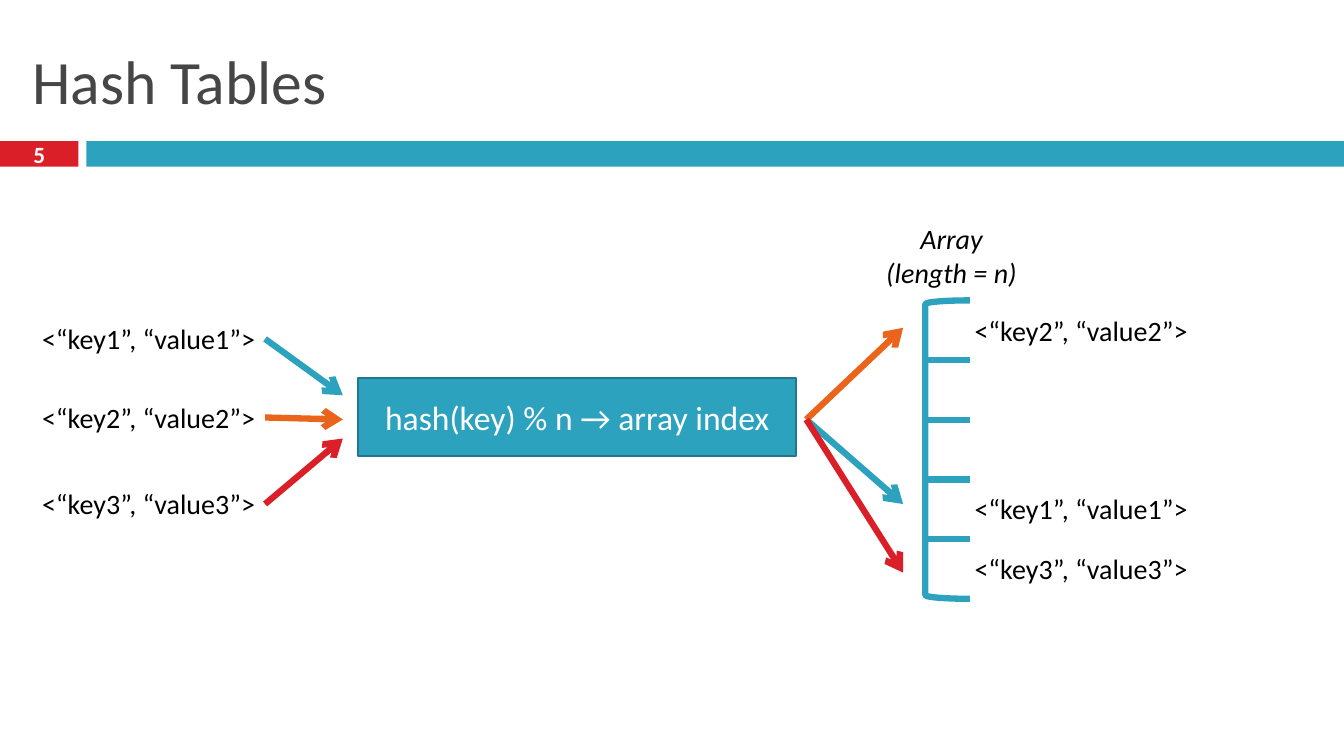
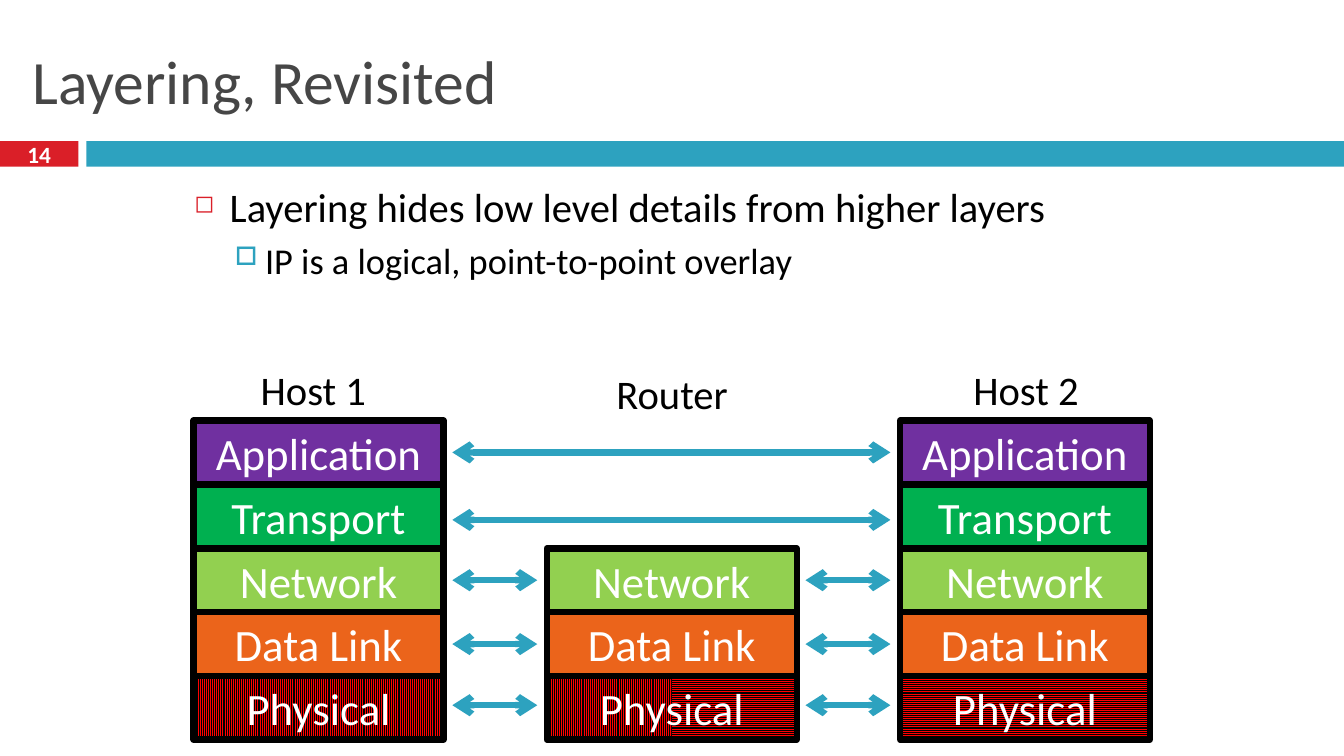
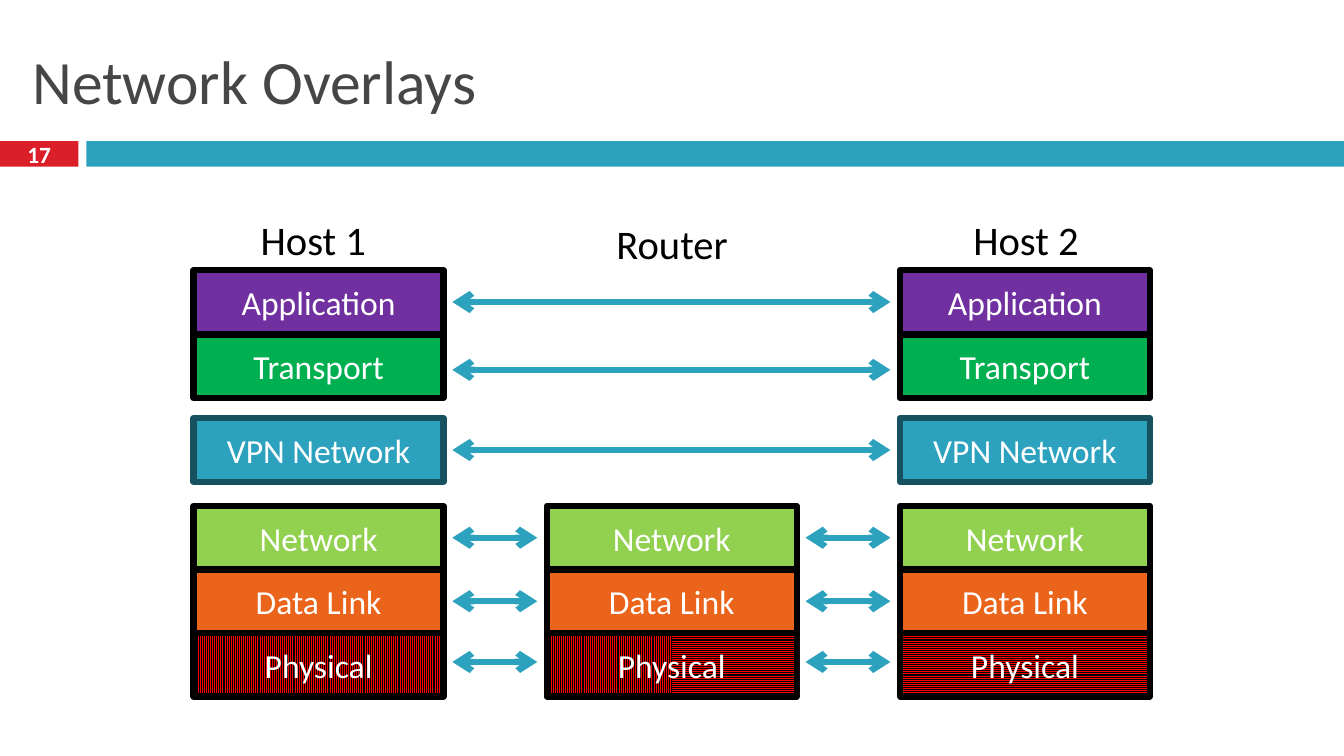
"""Build three networking lecture slides: hash tables, layering and overlays."""
import lxml.etree
import pptx
import pptx.dml.color
import pptx.enum.dml
import pptx.enum.shapes
import pptx.enum.text
import pptx.oxml.ns
import pptx.util

Cm = pptx.util.Cm
Pt = pptx.util.Pt
qn = pptx.oxml.ns.qn
ALIGN = pptx.enum.text.PP_ALIGN
ANCHOR = pptx.enum.text.MSO_ANCHOR
SHAPE = pptx.enum.shapes.MSO_SHAPE
PATTERN = pptx.enum.dml.MSO_PATTERN

COLORS = {
    "red": "DA1F28",
    "blue": "2DA2BF",
    "orange": "EB641B",
    "purple": "7030A0",
    "green": "00B050",
    "lime": "92D050",
    "stripe": "FF0000",
    "title": "464646",
    "black": "000000",
    "white": "FFFFFF",
    "hash edge": "21788D",
    "vpn edge": "175160",
}
VERTICAL = PATTERN.LIGHT_VERTICAL
HORIZONTAL = PATTERN.LIGHT_HORIZONTAL

LAYERS = {
    "Application": ("purple", "black", 0.8),
    "Transport": ("green", "black", 0.89),
    "VPN Network": ("blue", "vpn edge", 0.8),
    "Network": ("lime", "black", 0.8),
    "Data Link": ("orange", "black", 0.8),
    "Physical": (None, "black", 0.73),
}
ROUTER_LAYERS = ("Network", "Data Link", "Physical")
HOST_1, ROUTER, HOST_2 = 4.88, 13.78, 22.68
LAYER_WIDTH, LAYER_HEIGHT = 6.3, 1.6
ARROW_START, ARROW_GAP = 6.52, 0.24


def rgb(name):
    return pptx.dml.color.RGBColor.from_string(COLORS[name])


class Deck:
    """Holds the shared style and the slide being drawn."""

    font = "Calibri"
    width, height = 33.87, 19.05
    stroke = 4.5

    def __init__(self):
        self.presentation = pptx.Presentation()
        self.presentation.slide_width = Cm(self.width)
        self.presentation.slide_height = Cm(self.height)
        self.slide = None

    def new_slide(self, title, number):
        layout = self.presentation.slide_layouts.get_by_name("Title Only")
        self.slide = self.presentation.slides.add_slide(layout)
        heading = self.slide.shapes.title
        heading.left, heading.top = Cm(0.56), Cm(0.64)
        heading.width, heading.height = Cm(32.74), Cm(2.74)
        heading.text_frame.text = title
        heading.text_frame.vertical_anchor = ANCHOR.MIDDLE
        self.style(heading.text_frame.paragraphs[0], 44, "title", ALIGN.LEFT)
        self.box(0, 3.56, 1.98, 0.64, "red", text=number, size=16.6, bold=True)
        self.box(2.18, 3.56, self.width - 2.18, 0.64, "blue")

    def style(self, paragraph, size, color, align, bold=False, italic=False):
        paragraph.alignment = align
        font = paragraph.font
        font.name, font.size = self.font, Pt(size)
        font.bold, font.italic = bold, italic
        font.color.rgb = rgb(color)

    def box(self, left, top, width, height, fill=None, edge=None, weight=stroke,
            text="", size=24, bold=False, pattern=None, kind=SHAPE.RECTANGLE):
        shape = self.slide.shapes.add_shape(kind, Cm(left), Cm(top), Cm(width), Cm(height))
        shape.shadow.inherit = False
        if pattern is not None:
            shape.fill.patterned()
            shape.fill.pattern = pattern
            shape.fill.fore_color.rgb = rgb("black")
            shape.fill.back_color.rgb = rgb("stripe")
        elif fill:
            shape.fill.solid()
            shape.fill.fore_color.rgb = rgb(fill)
        else:
            shape.fill.background()
        if edge:
            shape.line.color.rgb = rgb(edge)
            shape.line.width = Pt(weight)
        else:
            shape.line.fill.background()
        if text:
            frame = shape.text_frame
            frame.text = text
            frame.vertical_anchor = ANCHOR.MIDDLE
            frame.margin_top = frame.margin_bottom = 0
            self.style(frame.paragraphs[0], size, "white", ALIGN.CENTER, bold)

    def text_frame(self, left, top, width, height, text):
        label = self.slide.shapes.add_textbox(Cm(left), Cm(top), Cm(width), Cm(height))
        label.text_frame.word_wrap = True
        label.text_frame.text = text
        return label.text_frame

    def label(self, left, top, width, height, text, size=20, align=ALIGN.CENTER,
              italic=False, before=0):
        for paragraph in self.text_frame(left, top, width, height, text).paragraphs:
            paragraph.space_before = Pt(before)
            self.style(paragraph, size, "black", align, italic=italic)

    def bullets(self, left, top, width, height, items):
        levels = (
            ("◻", "red", 60, 0.89, 0.89, 29, 7),
            ("□", "blue", 70, 1.78, 0.76, 26, 5.5),
        )
        frame = self.text_frame(left, top, width, height, "\n".join(text for _, text in items))
        for paragraph, (level, _) in zip(frame.paragraphs, items):
            mark, color, percent, margin, hanging, size, before = levels[level]
            paragraph.level = level
            paragraph.space_before = Pt(before)
            properties = paragraph._p.get_or_add_pPr()
            properties.set("marL", str(Cm(margin)))
            properties.set("indent", str(-Cm(hanging)))
            tint = lxml.etree.SubElement(properties, qn("a:buClr"))
            lxml.etree.SubElement(tint, qn("a:srgbClr"), val=COLORS[color])
            lxml.etree.SubElement(properties, qn("a:buSzPct"), val=str(percent * 1000))
            lxml.etree.SubElement(properties, qn("a:buChar"), char=mark)
            self.style(paragraph, size, "black", ALIGN.LEFT)

    def line(self, start, end, color="blue", heads=()):
        connector = self.slide.shapes.add_connector(
            pptx.enum.shapes.MSO_CONNECTOR.STRAIGHT, *map(Cm, (*start, *end)))
        connector.line.color.rgb = rgb(color)
        connector.line.width = Pt(self.stroke)
        outline = connector.line._get_or_add_ln()
        for head in heads:
            lxml.etree.SubElement(outline, qn(f"a:{head}"), type="arrow")
        lxml.etree.SubElement(connector._element.spPr, qn("a:effectLst"))

    def layer(self, name, left, top, size):
        fill, edge, _ = LAYERS[name]
        pattern = None
        if name == "Physical" and left == ROUTER:
            half = LAYER_WIDTH / 2
            self.box(left, top, half, LAYER_HEIGHT, pattern=VERTICAL)
            self.box(left + half, top, half, LAYER_HEIGHT, pattern=HORIZONTAL)
        elif name == "Physical":
            pattern = VERTICAL if left == HOST_1 else HORIZONTAL
        self.box(left, top, LAYER_WIDTH, LAYER_HEIGHT, fill, edge,
                 text=name, size=size, pattern=pattern)

    def stacks(self, tops, size):
        label_top = tops["Application"] - 1.52
        for name, left, label_left, drop in (
            ("Host 1", HOST_1, 5.92, 0),
            ("Router", ROUTER, 14.96, 0.1),
            ("Host 2", HOST_2, 23.88, 0),
        ):
            self.label(label_left, label_top + drop, 3.96, 1.5, name, 29, before=7)
            for layer, top in tops.items():
                if left != ROUTER or layer in ROUTER_LAYERS:
                    self.layer(layer, left, top, size)
        for layer, top in tops.items():
            hops = [HOST_1, ROUTER, HOST_2] if layer in ROUTER_LAYERS else [HOST_1, HOST_2]
            y = top + LAYERS[layer][2]
            for near, far in zip(hops, hops[1:]):
                self.line((near + ARROW_START, y), (far - ARROW_GAP, y),
                          heads=("headEnd", "tailEnd"))


def hash_tables(deck):
    deck.new_slide("Hash Tables", "5")
    deck.box(9.02, 9.53, 11.05, 1.96, "blue", "hash edge", 1.5,
             text="hash(key) % n → array index")
    array_left, array_top, array_width, array_height, slots = 23.32, 7.57, 1.12, 7.52, 5
    deck.label(21.87, 5.46, 4.22, 1.96, "Array\n(length = n)", italic=True)
    deck.box(array_left, array_top, array_width, array_height, edge="blue",
             kind=SHAPE.LEFT_BRACKET)
    for slot in range(1, slots):
        y = array_top + slot * array_height / slots
        deck.line((array_left, y), (array_left + array_width, y))
    for index, color, pair_top, hash_y, slot_y, stored_top in (
        (1, "blue", 7.98, 9.96, 12.7, 12.27),
        (2, "orange", 9.96, 10.57, 8.26, 7.77),
        (3, "red", 12.14, 11.05, 14.43, 13.77),
    ):
        pair = f"<“key{index}”, “value{index}”>"
        for left, top in ((0.48, pair_top), (23.98, stored_top)):
            deck.label(left, top, 6.2, 1.12, pair, align=ALIGN.RIGHT)
        deck.line((6.68, pair_top + 0.56), (8.64, hash_y), color, ("tailEnd",))
        deck.line((20.32, 10.57), (22.76, slot_y), color, ("tailEnd",))


def layering(deck):
    deck.new_slide("Layering, Revisited", "14")
    deck.bullets(4.65, 4.45, 24.56, 4.62, (
        (0, "Layering hides low level details from higher layers"),
        (1, "IP is a logical, point-to-point overlay"),
    ))
    names = [name for name in LAYERS if name != "VPN Network"]
    deck.stacks({name: 10.6 + row * 1.61 for row, name in enumerate(names)}, 32)


def overlays(deck):
    deck.new_slide("Network Overlays", "17")
    tops = (6.81, 8.43, 10.54, 12.75, 14.35, 15.95)
    deck.stacks(dict(zip(LAYERS, tops)), 24)


def main():
    deck = Deck()
    hash_tables(deck)
    layering(deck)
    overlays(deck)
    deck.presentation.save("out.pptx")


if __name__ == "__main__":
    main()
